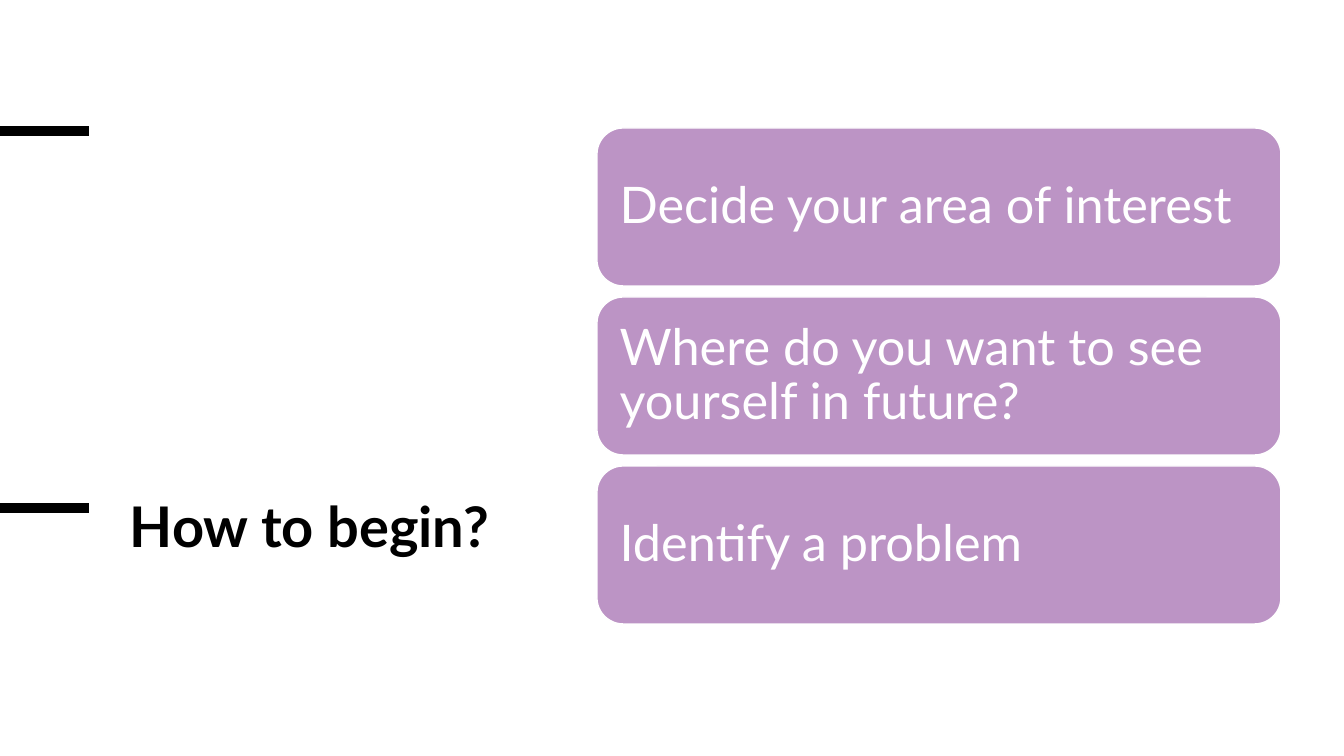
"""Build the "How to begin?" slide with three stacked step cards."""
from lxml import etree
from pptx import Presentation, util as u
from pptx.dml.color import RGBColor
from pptx.enum import shapes, text
from pptx.oxml.ns import qn

TITLE = "How to begin?"
STEPS = [
    "Decide your area of interest",
    "Where do you want to see yourself in future?",
    "Identify a problem",
]
RULES = [(131, 6.75), (508, 6.5)]

THEME = {
    "font": "Lato",
    "ink": RGBColor.from_string("000000"),
    "card": RGBColor.from_string("BC94C5"),
    "paper": RGBColor.from_string("FFFFFF"),
    "title_size": 40,
    "step_size": 36,
}

SLIDE_WIDTH, SLIDE_HEIGHT = 1344, 756
RULE_LENGTH = 89
TITLE_BOX = (120, 497, 417, 198)
CARD_LEFT, CARD_TOP, CARD_WIDTH, CARD_HEIGHT = 597, 128, 684, 158
CARD_PITCH = 169
CARD_INSET = 15


def px(value):
    return u.Emu(round(value * 914400 / 100.8))


def write(frame, words, size, color, spacing, bold=False):
    frame.word_wrap = True
    paragraph = frame.paragraphs[0]
    paragraph.alignment = text.PP_ALIGN.LEFT
    paragraph.line_spacing = spacing
    run = paragraph.add_run()
    run.text = words
    run.font.name = THEME["font"]
    run.font.size = u.Pt(size)
    run.font.bold = bold
    run.font.color.rgb = color


def add_rule(slide, y, weight):
    rule = slide.shapes.add_connector(
        shapes.MSO_CONNECTOR.STRAIGHT, px(0), px(y), px(RULE_LENGTH), px(y))
    rule.line.color.rgb = THEME["ink"]
    rule.line.width = u.Pt(weight)
    etree.SubElement(rule._element.spPr, qn("a:effectLst"))


def add_card(slide, index, words):
    card = slide.shapes.add_shape(
        shapes.MSO_SHAPE.ROUNDED_RECTANGLE, px(CARD_LEFT),
        px(CARD_TOP + index * CARD_PITCH), px(CARD_WIDTH), px(CARD_HEIGHT))
    card.shadow.inherit = False
    card.fill.solid()
    card.fill.fore_color.rgb = THEME["card"]
    card.line.color.rgb = THEME["paper"]
    card.line.width = u.Pt(1)
    frame = card.text_frame
    frame.vertical_anchor = text.MSO_ANCHOR.MIDDLE
    frame.margin_left = frame.margin_right = px(CARD_INSET)
    frame.margin_top = frame.margin_bottom = px(CARD_INSET)
    write(frame, words, THEME["step_size"], THEME["paper"], 0.9)


def main():
    presentation = Presentation()
    presentation.slide_width = px(SLIDE_WIDTH)
    presentation.slide_height = px(SLIDE_HEIGHT)
    slide = presentation.slides.add_slide(presentation.slide_layouts[6])
    for y, weight in RULES:
        add_rule(slide, y, weight)
    title = slide.shapes.add_textbox(*map(px, TITLE_BOX))
    write(title.text_frame, TITLE, THEME["title_size"], THEME["ink"], 0.85, bold=True)
    for index, words in enumerate(STEPS):
        add_card(slide, index, words)
    presentation.save("out.pptx")


if __name__ == "__main__":
    main()
